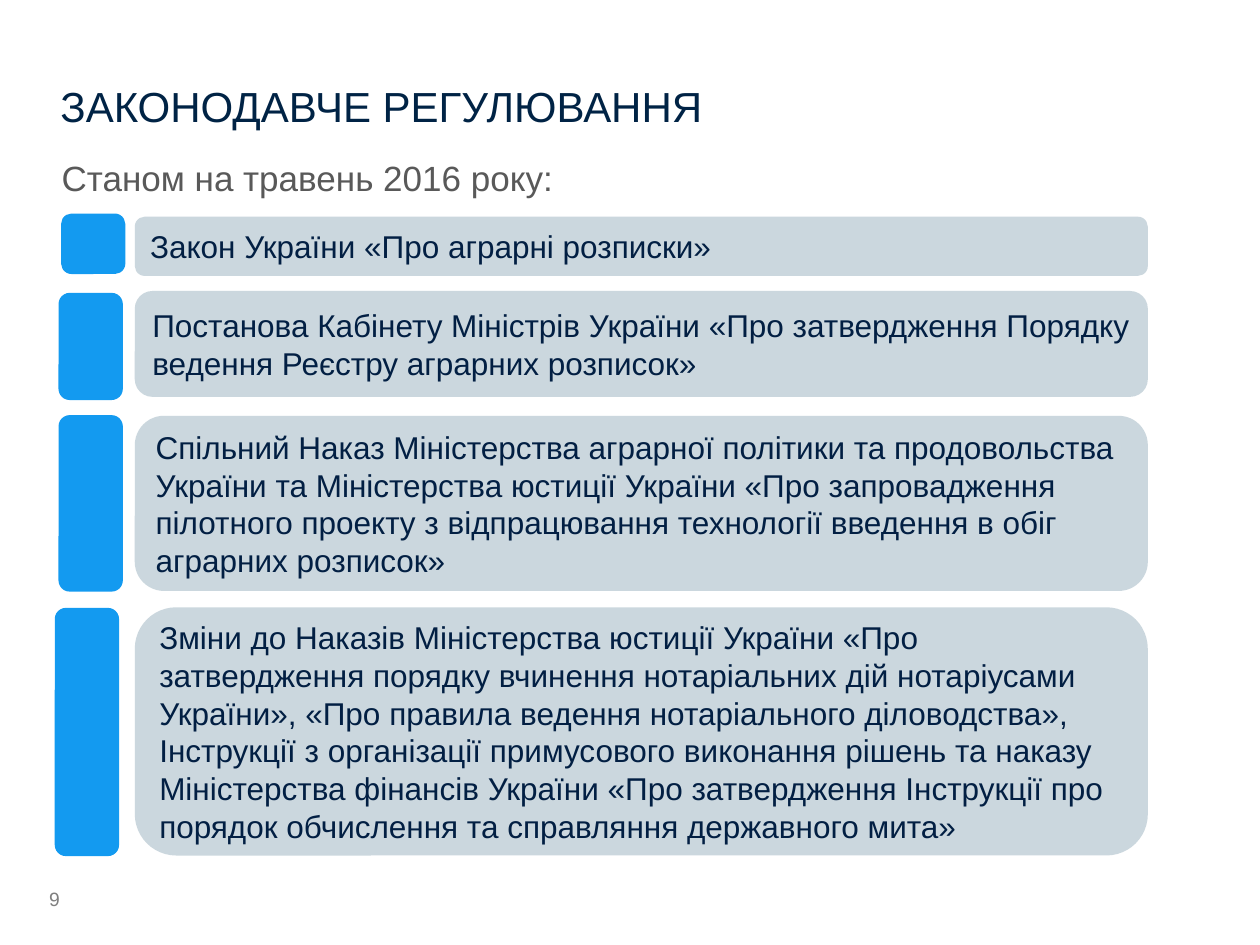
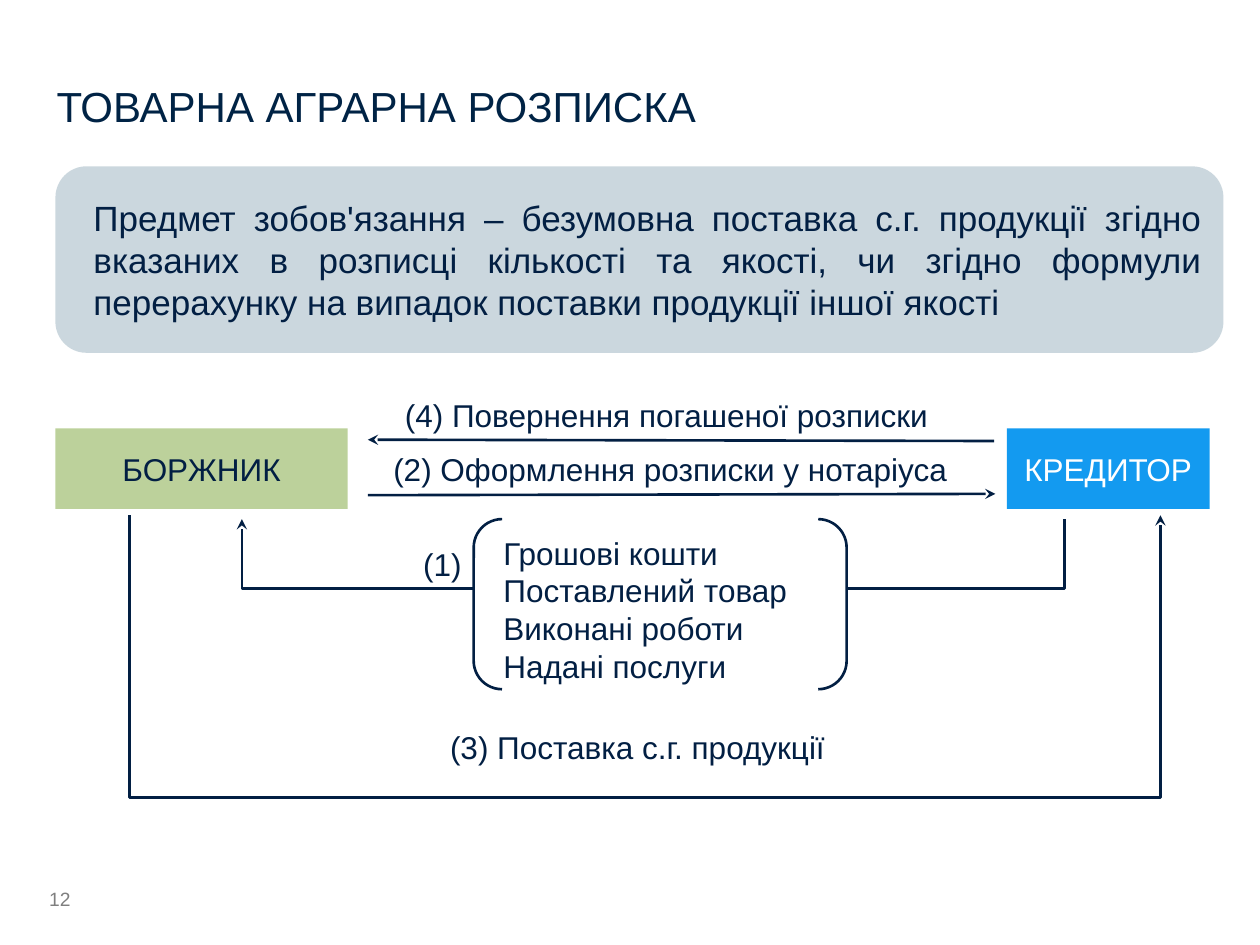
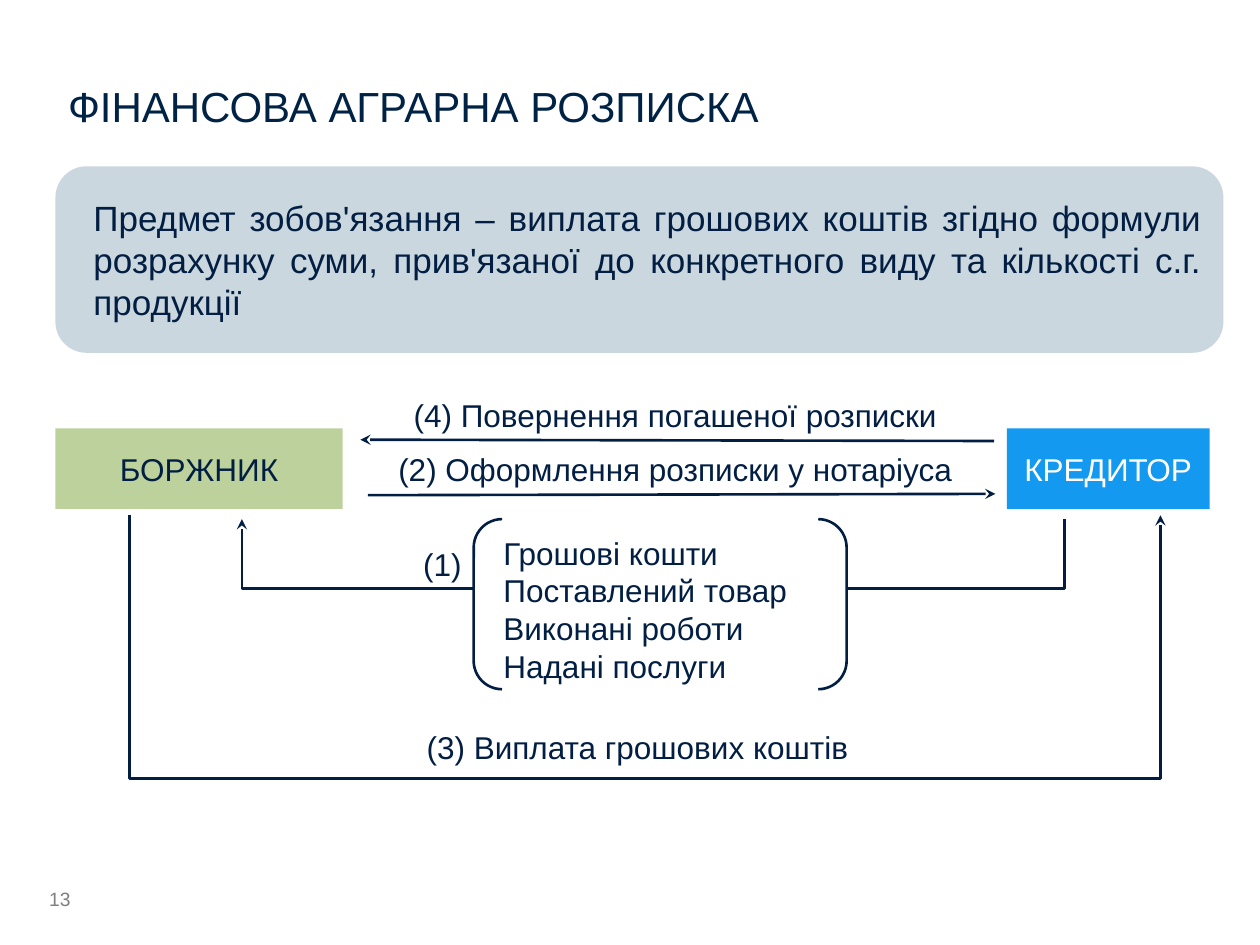
import pptx
import pptx.util
from lxml import etree
from pptx.dml.color import RGBColor
from pptx.enum.shapes import MSO_CONNECTOR, MSO_SHAPE
from pptx.enum.text import MSO_ANCHOR, PP_ALIGN
from pptx.oxml.ns import qn
from pptx.util import Inches

FONT = "Arial"
HUES = {
    "title": "002345",
    "ink": "021F43",
    "blue": "139AF0",
    "mist": "BFCED6",
    "green": "BCD19B",
    "white": "FFFFFF",
    "gray": "595959",
    "page": "7F7F7F",
}

LAWS = {
    "page": 9,
    "title": ("ЗАКОНОДАВЧЕ РЕГУЛЮВАННЯ", 0.48),
    "date": "Станом на травень 2016 року:",
    # text, top and height of the panel, then left, top and height of the tab
    "acts": [
        ("Закон України «Про аграрні розписки»",
         (1.72, 0.47), (0.49, 1.7, 0.47)),
        ("Постанова Кабінету Міністрів України «Про затвердження "
         "Порядку ведення Реєстру аграрних розписок»",
         (2.31, 0.84), (0.47, 2.33, 0.84)),
        ("Спільний Наказ Міністерства аграрної політики та продовольства "
         "України та Міністерства юстиції України «Про запровадження "
         "пілотного проекту з відпрацювання технології введення в обіг "
         "аграрних розписок»",
         (3.3, 1.39), (0.47, 3.3, 1.39)),
        ("Зміни до Наказів Міністерства юстиції України «Про "
         "затвердження порядку вчинення нотаріальних дій нотаріусами "
         "України», «Про правила ведення нотаріального діловодства», "
         "Інструкції з організації примусового виконання рішень та наказу "
         "Міністерства фінансів України «Про затвердження Інструкції про "
         "порядок обчислення та справляння державного мита»",
         (4.82, 1.97), (0.44, 4.83, 1.96)),
    ],
}

DEBTOR, LENDER = "БОРЖНИК", "КРЕДИТОР"
SIGN = "(2) Оформлення розписки у нотаріуса"
BACK = "(4) Повернення погашеної розписки"
GOODS = ["Грошові кошти", "Поставлений товар", "Виконані роботи", "Надані послуги"]

NOTES = [
    {
        "page": 12,
        "title": ("ТОВАРНА АГРАРНА РОЗПИСКА", 0.45),
        "duty": "Предмет зобов'язання – безумовна поставка с.г. продукції згідно "
                "вказаних в розписці кількості та якості, чи згідно формули "
                "перерахунку на випадок поставки продукції іншої якості",
        "pay": "(3) Поставка с.г. продукції",
        "debtor": 2.32, "tip": 2.92, "sign": 5.32, "back": 5.29, "drop": 2.24,
    },
    {
        "page": 13,
        "title": ("ФІНАНСОВА АГРАРНА РОЗПИСКА", 0.54),
        "duty": "Предмет зобов'язання – виплата грошових коштів згідно формули "
                "розрахунку суми, прив'язаної до конкретного виду та кількості с.г. "
                "продукції",
        "pay": "(3) Виплата грошових коштів",
        "debtor": 2.28, "tip": 2.86, "sign": 5.36, "back": 5.36, "drop": 2.09,
    },
]


def tint(name):
    return RGBColor.from_string(HUES[name])


def write(shape, lines, size, hue, align=PP_ALIGN.LEFT, anchor=MSO_ANCHOR.TOP):
    frame = shape.text_frame
    frame.word_wrap = True
    frame.vertical_anchor = anchor
    for i, line in enumerate(lines):
        para = frame.paragraphs[0] if i == 0 else frame.add_paragraph()
        para.alignment = align
        run = para.add_run()
        run.text = line
        run.font.name = FONT
        run.font.size = pptx.util.Pt(size)
        run.font.color.rgb = tint(hue)
    return frame


def label(slide, box, text, size=18, hue="ink", bare=False, **look):
    """Add a text box; a bare one has no margins and is centred vertically."""
    shape = slide.shapes.add_textbox(*map(Inches, box))
    if bare:
        look["anchor"] = MSO_ANCHOR.MIDDLE
    frame = write(shape, [text], size, hue, **look)
    if bare:
        frame.margin_left = frame.margin_right = 0
        frame.margin_top = frame.margin_bottom = 0


def block(slide, kind, box, fill=None, line=None, width=1.5):
    shape = slide.shapes.add_shape(kind, *map(Inches, box))
    shape.shadow.inherit = False
    if fill:
        shape.fill.solid()
        shape.fill.fore_color.rgb = tint(fill)
    else:
        shape.fill.background()
    if line:
        shape.line.color.rgb = tint(line)
        shape.line.width = pptx.util.Pt(width)
    else:
        shape.line.fill.background()
    return shape


def panel(slide, box, text, size, align=PP_ALIGN.LEFT):
    """Add a rounded, slightly see-through panel with text."""
    shape = block(slide, MSO_SHAPE.ROUNDED_RECTANGLE, box, "mist")
    color = shape.fill._xPr.find(".//" + qn("a:srgbClr"))
    etree.SubElement(color, qn("a:alpha"), val="80000")
    return write(shape, [text], size, "ink", align, MSO_ANCHOR.MIDDLE)


def point(shape, end):
    """Put an arrowhead on the headEnd or tailEnd of a line."""
    etree.SubElement(shape.line._get_or_add_ln(), qn("a:" + end), type="stealth")


def arrow(slide, start, stop):
    wire = slide.shapes.add_connector(
        MSO_CONNECTOR.STRAIGHT, *map(Inches, start + stop))
    wire.line.color.rgb = tint("ink")
    wire.line.width = pptx.util.Pt(1.5)
    point(wire, "tailEnd")
    etree.SubElement(wire._element.spPr, qn("a:effectLst"))


def loop(slide, left, top, width, drop, end):
    """Add a square bracket open at the top, with an arrowhead at one end."""
    box = (left + (width - drop) / 2, top + (drop - width) / 2, drop, width)
    shape = block(slide, MSO_SHAPE.LEFT_BRACKET, box, line="ink")
    shape.adjustments[0] = 0
    shape.rotation = 270
    point(shape, end)


def start(deck, data):
    slide = deck.slides.add_slide(deck.slide_layouts[6])
    text, left = data["title"]
    label(slide, (left, 0.56, 8.5, 0.55), text, 24, "title", bare=True)
    label(slide, (0.39, 6.94, 0.6, 0.39), str(data["page"]), 11, "page", bare=True)
    return slide


def list_laws(deck, data):
    slide = start(deck, data)
    label(slide, (0.39, 1.19, 8.82, 0.39), data["date"], 20, "gray")
    for text, (top, high), (left, y, tall) in data["acts"]:
        block(slide, MSO_SHAPE.ROUNDED_RECTANGLE, (left, y, 0.5, tall),
              "blue", "blue", 0.75)
        panel(slide, (1.07, top, 8.04, high), text, 18)


def draw_note(deck, data):
    slide = start(deck, data)
    frame = panel(slide, (0.44, 1.32, 9.27, 1.48), data["duty"], 20, PP_ALIGN.JUSTIFY)
    frame.margin_left = Inches(0.23)

    parties = [
        (DEBTOR, 0.44, data["debtor"], "green", "ink"),
        (LENDER, 7.99, 1.61, "blue", "white"),
    ]
    for text, left, width, fill, hue in parties:
        shape = block(slide, MSO_SHAPE.RECTANGLE, (left, 3.4, width, 0.64), fill)
        write(shape, [text], 18, hue, PP_ALIGN.CENTER, MSO_ANCHOR.MIDDLE)

    steps = [
        (data["pay"], 5.06, 5.73),
        (SIGN, data["sign"], 3.52),
        (BACK, data["back"], 3.09),
    ]
    for text, mid, top in steps:
        label(slide, (mid - 2.4, top, 4.8, 0.4), text, align=PP_ALIGN.CENTER)
    arrow(slide, (2.92, 3.93), (7.9, 3.92))
    arrow(slide, (7.89, 3.5), (data["tip"], 3.49))

    loop(slide, 1.92, 4.12, 6.53, 0.55, "tailEnd")
    loop(slide, 1.03, 4.09, 8.18, data["drop"], "headEnd")
    pair = block(slide, MSO_SHAPE.DOUBLE_BRACKET, (3.76, 4.12, 2.96, 1.35),
                 "white", "ink")
    write(pair, GOODS, 18, "ink").margin_left = Inches(0.17)
    label(slide, (3.26, 4.28, 0.58, 0.4), "(1)")


def main():
    deck = pptx.Presentation()
    deck.slide_width, deck.slide_height = Inches(10), Inches(7.5)
    list_laws(deck, LAWS)
    for data in NOTES:
        draw_note(deck, data)
    deck.save("out.pptx")


if __name__ == "__main__":
    main()
